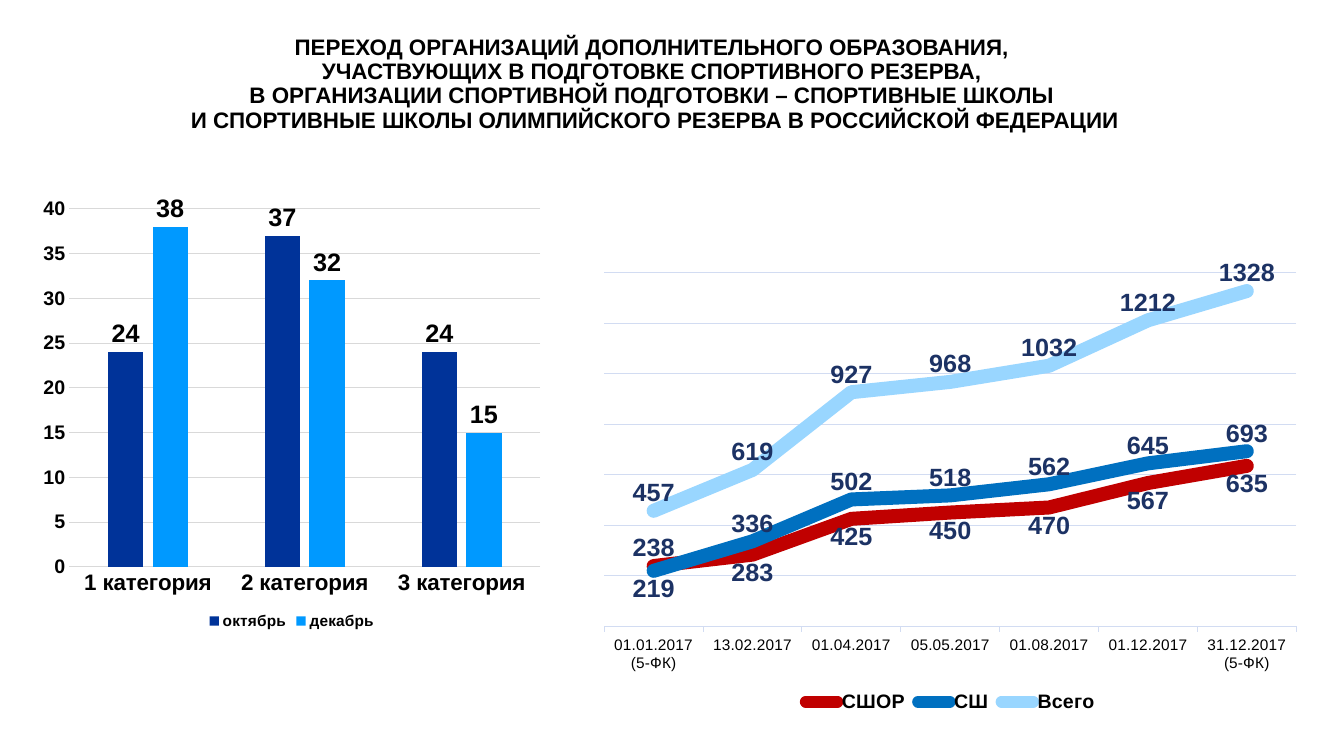
import dataclasses

import pptx
import pptx.chart.data
import pptx.dml.color
import pptx.enum.chart
import pptx.enum.text
import pptx.oxml
import pptx.oxml.ns
import pptx.util

Inches = pptx.util.Inches
Pt = pptx.util.Pt
rgb = pptx.dml.color.RGBColor.from_string
ChartType = pptx.enum.chart.XL_CHART_TYPE
LabelPosition = pptx.enum.chart.XL_LABEL_POSITION
TickMark = pptx.enum.chart.XL_TICK_MARK


@dataclasses.dataclass(frozen=True)
class Theme:
    font: str = "Arial"
    text: str = "000000"
    column_grid: str = "D9D9D9"
    line_grid: str = "D2DCF2"
    october: str = "003399"
    december: str = "0099FF"
    reserve_schools: str = "C00000"
    schools: str = "0070C0"
    total: str = "99D6FF"
    line_label: str = "1C3264"
    title_size: int = 16
    category_size: int = 16
    value_size: int = 14
    label_size: int = 18
    column_legend_size: int = 11
    date_size: int = 11
    line_legend_size: int = 14


theme = Theme()


def style_font(font, size, color=theme.text, bold=True):
    for name, value in {"name": theme.font, "size": Pt(size), "bold": bold}.items():
        setattr(font, name, value)
    font.color.rgb = rgb(color)


def add_plain_chart(kind, box, plot_box, categories, series, grid, legend_size):
    """Add a chart with a fixed inner plot area, light gridlines and a bottom legend."""
    data = pptx.chart.data.CategoryChartData()
    data.categories = categories
    for name, values, *_ in series:
        data.add_series(name, values)
    chart = slide.shapes.add_chart(kind, *map(Inches, box), data).chart
    chart.has_title = False
    style_font(chart.font, legend_size)
    chart.has_legend = True
    chart.legend.position = pptx.enum.chart.XL_LEGEND_POSITION.BOTTOM
    chart.legend.include_in_layout = False
    style_font(chart.legend.font, legend_size)
    for line in (chart.value_axis.major_gridlines.format.line,
                 chart.category_axis.format.line):
        line.color.rgb = rgb(grid)
        line.width = Pt(0.75)
    chart.plots[0].vary_by_categories = False

    plot_area = chart._chartSpace.chart.plotArea
    for old_layout in plot_area.findall(pptx.oxml.ns.qn("c:layout")):
        plot_area.remove(old_layout)
    sizes = "".join(f'<c:{side} val="{share}"/>' for side, share in zip("xywh", plot_box))
    plot_area.insert(0, pptx.oxml.parse_xml(
        f'<c:layout {pptx.oxml.ns.nsdecls("c")}><c:manualLayout>'
        '<c:layoutTarget val="inner"/><c:xMode val="edge"/><c:yMode val="edge"/>'
        f'{sizes}</c:manualLayout></c:layout>'))
    return chart


deck = pptx.Presentation()
deck.slide_width = Inches(13.33)
deck.slide_height = Inches(7.5)
slide = deck.slides.add_slide(deck.slide_layouts[6])

# Title
title = slide.shapes.add_textbox(*map(Inches, (0.72, 0.12, 11.55, 1.44))).text_frame
title.word_wrap = True
title.vertical_anchor = pptx.enum.text.MSO_ANCHOR.MIDDLE
heading = title.paragraphs[0]
heading.text = " \v".join((
    "ПЕРЕХОД ОРГАНИЗАЦИЙ ДОПОЛНИТЕЛЬНОГО ОБРАЗОВАНИЯ,",
    "УЧАСТВУЮЩИХ В ПОДГОТОВКЕ СПОРТИВНОГО РЕЗЕРВА,",
    "В ОРГАНИЗАЦИИ СПОРТИВНОЙ ПОДГОТОВКИ – СПОРТИВНЫЕ ШКОЛЫ",
    "И СПОРТИВНЫЕ ШКОЛЫ ОЛИМПИЙСКОГО РЕЗЕРВА В РОССИЙСКОЙ ФЕДЕРАЦИИ",
))
heading.alignment = pptx.enum.text.PP_ALIGN.CENTER
heading.line_spacing = 0.9
for run in heading.runs:
    style_font(run.font, theme.title_size)

# Categories in October and December
months = (
    ("октябрь", (24, 37, 24), theme.october),
    ("декабрь", (38, 32, 15), theme.december),
)
categories_chart = add_plain_chart(
    ChartType.COLUMN_CLUSTERED, (0.33, 1.85, 5.13, 4.44), (0.07, 0.05, 0.91, 0.8),
    ("1 категория", "2 категория", "3 категория"), months,
    theme.column_grid, theme.column_legend_size)
categories_chart.plots[0].gap_width = 219
categories_chart.plots[0].overlap = -27
count_axis = categories_chart.value_axis
count_axis.minimum_scale, count_axis.maximum_scale, count_axis.major_unit = 0, 40, 5
count_axis.format.line.fill.background()
style_font(count_axis.tick_labels.font, theme.value_size)
style_font(categories_chart.category_axis.tick_labels.font, theme.category_size)
for axis in (count_axis, categories_chart.category_axis):
    axis.major_tick_mark = TickMark.NONE
for bars, (_, _, color) in zip(categories_chart.series, months):
    bars.format.fill.solid()
    bars.format.fill.fore_color.rgb = rgb(color)
    labels = bars.data_labels
    labels.show_value = True
    labels.position = LabelPosition.OUTSIDE_END
    style_font(labels.font, theme.label_size)

# Growth in the number of schools; the first labels of the two lower lines swap sides
above, below = LabelPosition.ABOVE, LabelPosition.BELOW
schools = (
    ("СШОР", (238, 283, 425, 450, 470, 567, 635), theme.reserve_schools, above, below),
    ("СШ", (219, 336, 502, 518, 562, 645, 693), theme.schools, below, above),
    ("Всего", (457, 619, 927, 968, 1032, 1212, 1328), theme.total, above, above),
)
growth_chart = add_plain_chart(
    ChartType.LINE, (5.85, 2.57, 7.15, 4.54), (0.02, 0.02, 0.96, 0.78),
    ("01.01.2017 (5-ФК)", "13.02.2017", "01.04.2017", "05.05.2017",
     "01.08.2017", "01.12.2017", "31.12.2017 (5-ФК)"), schools,
    theme.line_grid, theme.line_legend_size)
school_axis = growth_chart.value_axis
school_axis.minimum_scale, school_axis.maximum_scale, school_axis.major_unit = 0, 1400, 200
school_axis.visible = False
date_axis = growth_chart.category_axis
date_axis.major_tick_mark = TickMark.OUTSIDE
style_font(date_axis.tick_labels.font, theme.date_size, bold=False)
for curve, (_, _, color, first_side, side) in zip(growth_chart.series, schools):
    curve.smooth = False
    curve.marker.style = pptx.enum.chart.XL_MARKER_STYLE.NONE
    curve.format.line.color.rgb = rgb(color)
    curve.format.line.width = Pt(10)
    curve._element.xpath("c:spPr/a:ln")[0].set("cap", "rnd")
    curve.data_labels.show_value = True
    first_label = curve.points[0].data_label
    for labels, position in ((curve.data_labels, side), (first_label, first_side)):
        style_font(labels.font, theme.label_size, theme.line_label)
        labels.position = position

deck.save("out.pptx")
